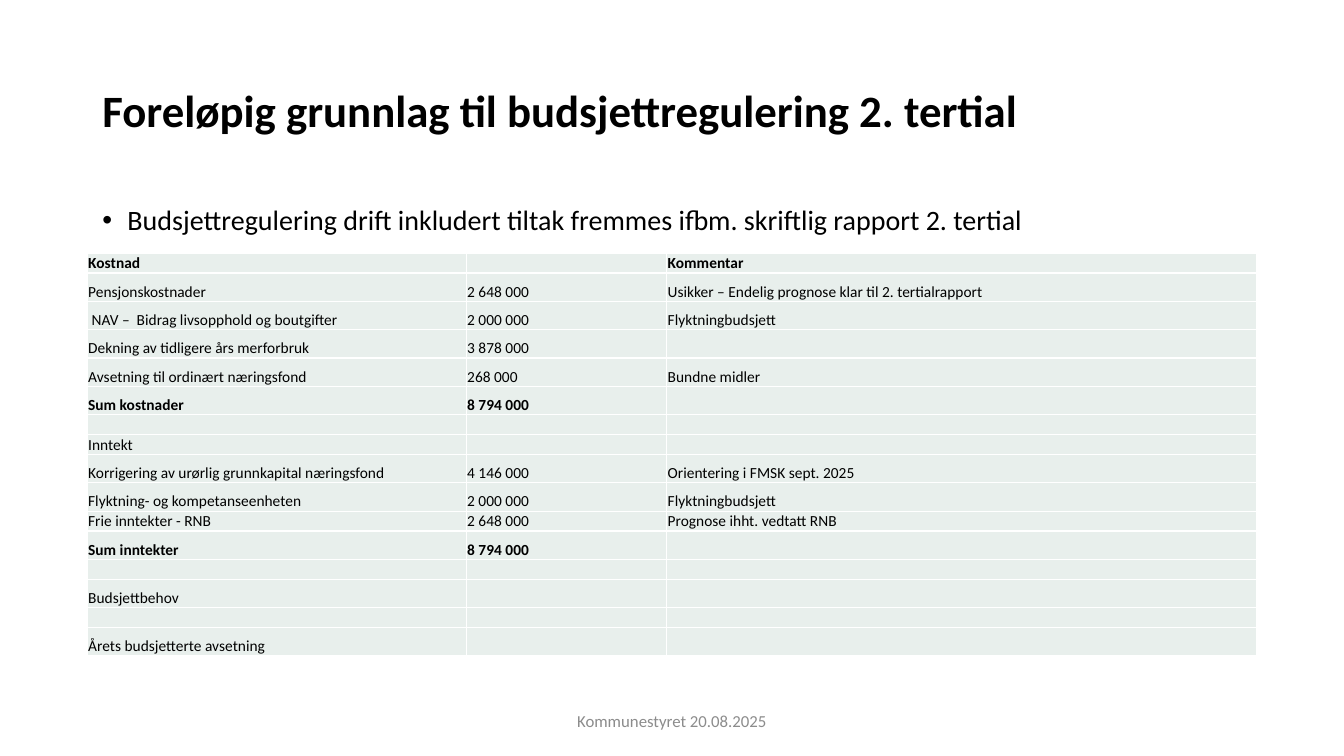
from dataclasses import dataclass

from lxml import etree
from pptx import Presentation
from pptx.dml.color import RGBColor
from pptx.enum.text import MSO_ANCHOR, PP_ALIGN
from pptx.oxml.ns import qn
from pptx.slide import Slide
from pptx.table import _Cell
from pptx.util import Pt

EMU_PER_PX = 9525
LEFT, CENTER = PP_ALIGN.LEFT, PP_ALIGN.CENTER
TOP, MIDDLE, BOTTOM = MSO_ANCHOR.TOP, MSO_ANCHOR.MIDDLE, MSO_ANCHOR.BOTTOM
FONT = "Calibri"
BLACK, GREY, WHITE, PALE_GREEN = "000000", "8C8C8C", "FFFFFF", "E8EFEC"
TABLE_LEFT, TABLE_TOP = 83, 241
COLUMN_WIDTHS = (361, 191, 562)
SHORT, TALL = 19, 27
CELL_SIZE = 11
CELL_FORMAT = {
    "vertical_anchor": BOTTOM,
    "margin_left": EMU_PER_PX,
    "margin_top": EMU_PER_PX,
    "margin_right": EMU_PER_PX,
    "margin_bottom": 0,
}


@dataclass(frozen=True)
class TextItem:
    text: str
    left: int
    top: int
    width: int
    height: int
    size: int
    color: str = BLACK
    bold: bool = False
    align: PP_ALIGN = LEFT
    anchor: MSO_ANCHOR = TOP
    line_spacing: float = 1.0
    bullet: str = ""


@dataclass(frozen=True)
class BudgetRow:
    label: str = ""
    amount: str = ""
    comment: str = ""
    height: int = TALL
    bold: bool = False


TEXT_ITEMS = (
    TextItem("Foreløpig grunnlag til budsjettregulering 2. tertial",
             88, 38, 1104, 139, 32, bold=True, anchor=MIDDLE, line_spacing=0.9),
    TextItem("Kommunestyret 20.08.2025", 424, 667, 432, 38, 12, GREY,
             align=CENTER, anchor=MIDDLE),
    TextItem("Budsjettregulering drift inkludert tiltak fremmes ifbm. "
             "skriftlig rapport 2. tertial",
             88, 192, 1104, 457, 20, line_spacing=0.9, bullet="•"),
)

BUDGET_ROWS = (
    BudgetRow("Kostnad", "", "Kommentar", SHORT, True),
    BudgetRow("Pensjonskostnader", "2 648 000",
              "Usikker – Endelig prognose klar til 2. tertialrapport"),
    BudgetRow(" NAV –  Bidrag livsopphold og boutgifter", "2 000 000", "Flyktningbudsjett"),
    BudgetRow("Dekning av tidligere års merforbruk", "3 878 000"),
    BudgetRow("Avsetning til ordinært næringsfond", "268 000", "Bundne midler"),
    BudgetRow("Sum kostnader", "8 794 000", bold=True),
    BudgetRow(height=SHORT),
    BudgetRow("Inntekt", height=SHORT),
    BudgetRow("Korrigering av urørlig grunnkapital næringsfond", "4 146 000",
              "Orientering i FMSK sept. 2025"),
    BudgetRow("Flyktning- og kompetanseenheten", "2 000 000", "Flyktningbudsjett"),
    BudgetRow("Frie inntekter - RNB", "2 648 000", "Prognose ihht. vedtatt RNB", SHORT),
    BudgetRow("Sum inntekter", "8 794 000", bold=True),
    BudgetRow(height=SHORT),
    BudgetRow("Budsjettbehov"),
    BudgetRow(height=SHORT),
    BudgetRow("Årets budsjetterte avsetning"),
)


def px(length: int) -> int:
    return length * EMU_PER_PX


def rgb(color: str) -> RGBColor:
    return RGBColor.from_string(color)


def apply_format(target: object, values: dict) -> None:
    for name, value in values.items():
        setattr(target, name, value)


def add_span(para, text: str, size: int, color: str, bold: bool) -> None:
    span = para.add_run()
    span.text = text
    apply_format(span.font, {"name": FONT, "size": Pt(size), "bold": bold})
    span.font.color.rgb = rgb(color)


def add_bullet(para, character: str) -> None:
    properties = para._p.get_or_add_pPr()
    properties.set("marL", str(px(24)))
    properties.set("indent", str(px(-24)))
    etree.SubElement(properties, qn("a:buFont")).set("typeface", "Arial")
    etree.SubElement(properties, qn("a:buChar")).set("char", character)


def add_text(page: Slide, item: TextItem) -> None:
    box = page.shapes.add_textbox(px(item.left), px(item.top), px(item.width), px(item.height))
    apply_format(box.text_frame, {"word_wrap": True, "vertical_anchor": item.anchor})
    para = box.text_frame.paragraphs[0]
    if item.bullet:
        add_bullet(para, item.bullet)
    apply_format(para, {"alignment": item.align, "line_spacing": item.line_spacing})
    add_span(para, item.text, item.size, item.color, item.bold)


def add_borders(cell: _Cell) -> None:
    properties = cell._tc.get_or_add_tcPr()
    for index, side in enumerate(("a:lnL", "a:lnR", "a:lnT", "a:lnB")):
        line = etree.Element(qn(side), w=str(Pt(1)))
        fill = etree.SubElement(line, qn("a:solidFill"))
        etree.SubElement(fill, qn("a:srgbClr")).set("val", WHITE)
        properties.insert(index, line)


def fill_cell(cell: _Cell, text: str, bold: bool) -> None:
    apply_format(cell, CELL_FORMAT)
    cell.fill.solid()
    cell.fill.fore_color.rgb = rgb(PALE_GREEN)
    add_borders(cell)
    para = cell.text_frame.paragraphs[0]
    if text:
        add_span(para, text, CELL_SIZE, BLACK, bold)
    else:
        ending = etree.SubElement(para._p, qn("a:endParaRPr"), sz=str(CELL_SIZE * 100))
        etree.SubElement(ending, qn("a:latin")).set("typeface", FONT)


def add_budget_table(page: Slide) -> None:
    height = sum(row.height for row in BUDGET_ROWS)
    frame = page.shapes.add_table(len(BUDGET_ROWS), len(COLUMN_WIDTHS), px(TABLE_LEFT),
                                  px(TABLE_TOP), px(sum(COLUMN_WIDTHS)), px(height))
    table = frame.table
    apply_format(table, {"first_row": False, "horz_banding": False})
    for column, width in zip(table.columns, COLUMN_WIDTHS):
        column.width = px(width)
    for table_row, row in zip(table.rows, BUDGET_ROWS):
        table_row.height = px(row.height)
        for cell, text in zip(table_row.cells, (row.label, row.amount, row.comment)):
            fill_cell(cell, text, row.bold)


def main() -> None:
    deck = Presentation()
    apply_format(deck, {"slide_width": px(1280), "slide_height": px(720)})
    page = deck.slides.add_slide(deck.slide_layouts[6])
    for item in TEXT_ITEMS:
        add_text(page, item)
    add_budget_table(page)
    deck.save("out.pptx")


if __name__ == "__main__":
    main()
